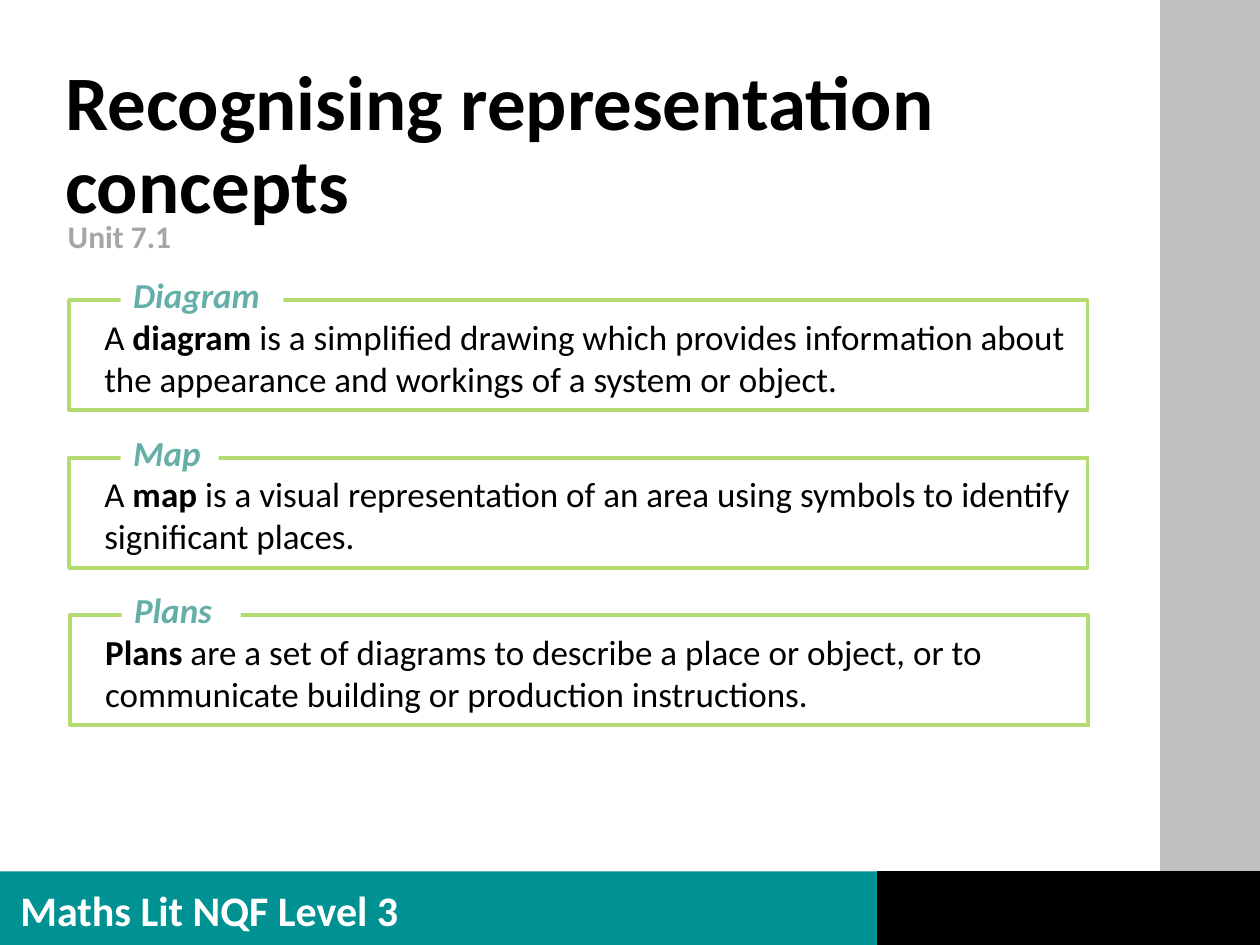
from pptx import Presentation
from pptx.dml.color import RGBColor
from pptx.enum.shapes import MSO_SHAPE as Shape
from pptx.enum.text import MSO_ANCHOR as Anchor, MSO_AUTO_SIZE as Fit, PP_ALIGN as Align
from pptx.util import Pt
from lxml.etree import SubElement

HEX = {"white": "FFFFFF", "black": "000000", "grey": "BFBFBF", "teal": "009193",
       "lime": "B4DB6F", "sea": "64AFA8", "mute": "A6A6A6"}
RGB = {name: RGBColor.from_string(code) for name, code in HEX.items()}

deck = Presentation()
deck.slide_width, deck.slide_height = Pt(720), Pt(540)
slide = deck.slides.add_slide(deck.slide_layouts[1])
shapes = slide.shapes


def write(shape, *runs, size=20, color="black", bold=False, italic=False,
          space=1, anchor=Anchor.TOP, wrap=True, plain=False):
    frame = shape.text_frame
    frame.word_wrap = wrap
    frame.auto_size = Fit.NONE
    frame.vertical_anchor = anchor
    para = frame.paragraphs[0]
    para.alignment = Align.LEFT
    para.line_spacing = space
    para.space_before = Pt(0)
    if plain:
        props = para._p.get_or_add_pPr()
        props.set("marL", "0")
        props.set("indent", "0")
        SubElement(props, "{http://schemas.openxmlformats.org/drawingml/2006/main}buNone")
    for text, strong in runs:
        run = para.add_run()
        run.text = text
        font = run.font
        font.name, font.size = "Calibri", Pt(size)
        font.bold, font.italic = bold or strong, italic
        font.color.rgb = RGB[color]


def block(left, top, width, height, fill=None, line=None, weight=1):
    box = shapes.add_shape(Shape.RECTANGLE, Pt(left), Pt(top), Pt(width), Pt(height))
    box.shadow.inherit = False
    if fill:
        box.fill.solid()
        box.fill.fore_color.rgb = RGB[fill]
    else:
        box.fill.background()
    if line:
        box.line.color.rgb = RGB[line]
        box.line.width = Pt(weight)
    else:
        box.line.fill.background()
    return box


block(663, 0, 57, 540, fill="grey")
block(0, 498, 720, 42, fill="teal")
block(501.5, 498, 218.5, 42, fill="black", line="black")
foot = shapes.add_textbox(Pt(4.5), Pt(502), Pt(270), Pt(36))
write(foot, ("Maths Lit NQF Level 3", True), size=24, color="white", wrap=False)

title, body = shapes.title, slide.placeholders[1]
for holder, left, top, height in ((title, 30, 33, 57), (body, 31.5, 123, 24)):
    holder.left, holder.top = Pt(left), Pt(top)
    holder.width, holder.height = Pt(623), Pt(height)
write(title, ("Recognising representation concepts", True), size=44, space=0.9)
write(body, ("Unit 7.1", True), size=18, color="mute", space=0.9, plain=True)

terms = (
    ("Diagram", 93, 39.5, ("A ", False), ("diagram ", True),
     ("is a simplified drawing which provides information about the appearance "
      "and workings of a system or object.", False)),
    ("Map", 56, 39.5, ("A ", False), ("map ", True),
     ("is a visual representation of an area using symbols to identify "
      "significant places.", False)),
    ("Plans", 68, 40, ("Plans ", True),
     ("are a set of diagrams to describe a place or object, or to communicate "
      "building or production instructions.", False)),
)
for row, (term, width, left, *runs) in enumerate(terms):
    top = 171.5 + 90 * row
    block(left, top, 582, 63, line="lime", weight=2.25)
    label = block(left + 29.5, top - 15, width, 27, fill="white")
    write(label, (term, True), color="sea", italic=True, space=0.9, anchor=Anchor.MIDDLE)
    note = shapes.add_textbox(Pt(left + 13), Pt(top + 5), Pt(567), Pt(55.5))
    write(note, *runs)

deck.save("out.pptx")
